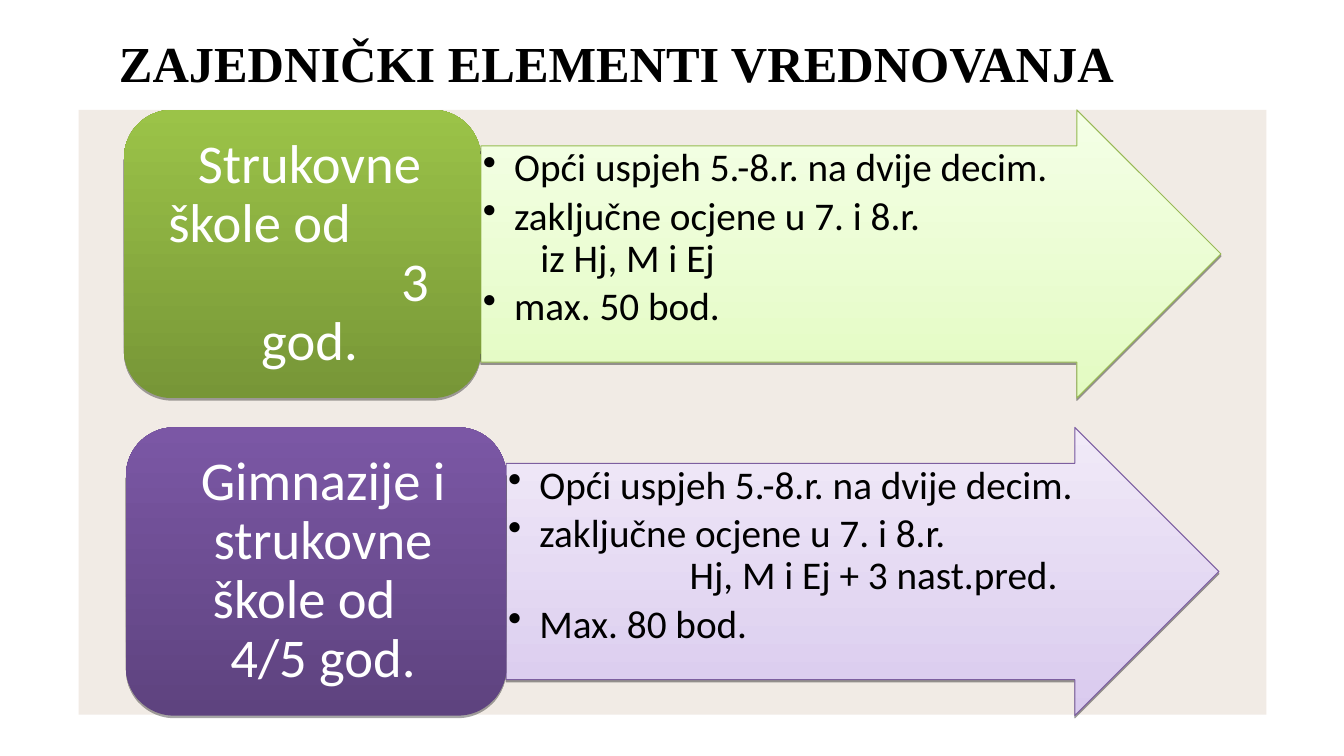
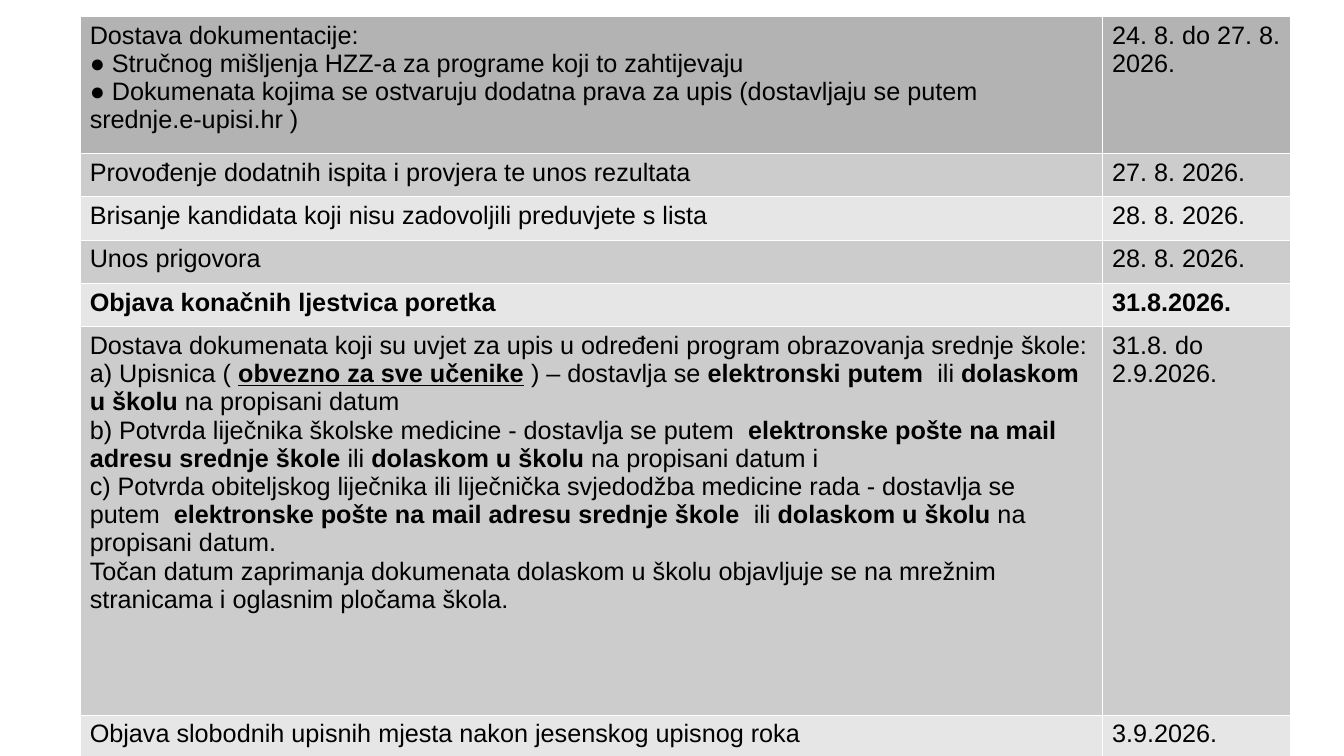
from lxml import etree
from pptx import Presentation
from pptx.dml.color import RGBColor
from pptx.enum.shapes import MSO_SHAPE as Shape
from pptx.enum.text import MSO_ANCHOR as Anchor, PP_ALIGN as Align
from pptx.oxml.ns import qn
from pptx.util import Inches, Pt

COLORS = {
    "text": "000000",
    "white": "FFFFFF",
    "panel": "F1EBE5",
    "green_dark": "779637", "green": "9BC348", "green_line": "98B855",
    "green_pale": "E3FBC2", "green_faint": "F4FFE6",
    "purple_dark": "5E437F", "purple": "7B57A5", "purple_line": "7D5FA0",
    "purple_pale": "D9CAEE", "purple_faint": "F1EAF8",
    "row_head": "B3B3B3", "row_odd": "CCCCCC", "row_even": "E6E6E6",
}
TITLE_ONLY, BLANK = 5, 6
BAND_TOP, BAND_HEIGHT, BAND_STEP = 1.09, 2.86, 3.15

# Label lines are (text, indent); no indent means centred.
# Arrow lines are (text, indent); no indent means a bulleted line.
BANDS = [
    {"hue": "green", "label_left": 1.23, "split": 4.77, "tip": 12.11,
     "label": [("Strukovne", None), ("škole od", 0), ("3", 2.31), ("god.", None)],
     "lines": [("Opći uspjeh 5.-8.r. na dvije decim.", None),
               ("zaključne ocjene u 7. i 8.r.", None),
               ("iz Hj, M i Ej", 0.57),
               ("max. 50 bod.", None)]},
    {"hue": "purple", "label_left": 1.25, "split": 5.02, "tip": 12.09,
     "label": [("Gimnazije i", None), ("strukovne", None),
               ("škole od", 0.42), ("4/5 god.", None)],
     "lines": [("Opći uspjeh 5.-8.r. na dvije decim.", None),
               ("zaključne ocjene u 7. i 8.r.", None),
               ("Hj, M i Ej + 3 nast.pred.", 1.8),
               ("Max. 80 bod.", None)]},
]

BOLD = {"bold": True}
KEY = {"bold": True, "underline": True}
COLUMN_WIDTHS = [10.14, 1.87]
# Each row: height, paragraphs of (text, format) runs, date, date format.
SCHEDULE = [
    (1.36, [[("Dostava dokumentacije:", {})],
            [("● Stručnog mišljenja HZZ-a za programe koji to zahtijevaju", {})],
            [("● Dokumenata kojima se ostvaruju dodatna prava za upis "
              "(dostavljaju se putem srednje.e-upisi.hr )", {})]],
     "24. 8. do 27. 8. 2026.", {}),
    (0.43, [[("Provođenje dodatnih ispita i provjera te unos rezultata", {})]],
     "27. 8. 2026.", {}),
    (0.43, [[("Brisanje kandidata koji nisu zadovoljili preduvjete s lista", {})]],
     "28. 8. 2026.", {}),
    (0.43, [[("Unos prigovora", {})]], "28. 8. 2026.", {}),
    (0.43, [[("Objava konačnih ljestvica poretka", BOLD)]], "31.8.2026.", BOLD),
    (3.85, [[("Dostava dokumenata koji su uvjet za upis u određeni program "
              "obrazovanja srednje škole:", {})],
            [("a) Upisnica ( ", {}), ("obvezno za sve učenike", KEY),
             (" ) – dostavlja se ", {}), ("elektronski putem ", BOLD),
             (" ili ", {}), ("dolaskom u školu", BOLD),
             (" na propisani datum", {})],
            [("b) Potvrda liječnika školske medicine - dostavlja se putem  ", {}),
             ("elektronske pošte na mail adresu srednje škole ", BOLD),
             ("ili ", {}), ("dolaskom u školu", BOLD),
             (" na propisani datum i", {})],
            [("c) Potvrda obiteljskog liječnika ili liječnička svjedodžba "
              "medicine rada - dostavlja se putem  ", {}),
             ("elektronske pošte na mail adresu srednje škole ", BOLD),
             (" ili ", {}), ("dolaskom u školu", BOLD),
             (" na propisani datum.", {})],
            [("Točan datum zaprimanja dokumenata dolaskom u školu objavljuje se "
              "na mrežnim stranicama i oglasnim pločama škola.", {})]],
     "31.8. do 2.9.2026.", {}),
    (0.43, [[("Objava slobodnih upisnih mjesta nakon jesenskog upisnog roka", {})]],
     "3.9.2026.", {}),
]


def rgb(name):
    return RGBColor.from_string(COLORS[name])


def write(paragraph, text, size=18, font="Arial", color="text", bold=False,
          underline=False):
    run = paragraph.add_run()
    run.text = text
    run.font.size = Pt(size)
    run.font.name = font
    run.font.color.rgb = rgb(color)
    run.font.bold = bold
    run.font.underline = underline


def paragraphs_for(frame, items):
    """Yield a paragraph of the frame with each item, reusing the first one."""
    for index, item in enumerate(items):
        yield (frame.add_paragraph() if index else frame.paragraphs[0]), item


def set_indent(paragraph, left, first=0.0):
    properties = paragraph._p.get_or_add_pPr()
    properties.set("marL", str(Inches(left)))
    properties.set("indent", str(Inches(first)))
    return properties


def add_bullet(paragraph):
    properties = set_indent(paragraph, 0.31, -0.31)
    color = etree.SubElement(properties, qn("a:buClr"))
    etree.SubElement(color, qn("a:srgbClr"), val=COLORS["text"])
    etree.SubElement(properties, qn("a:buChar"), char="•")


def set_insets(frame, left, top, right, bottom):
    frame.margin_left, frame.margin_top = Inches(left), Inches(top)
    frame.margin_right, frame.margin_bottom = Inches(right), Inches(bottom)


def add_shadow(shape, distance, opacity):
    shape.shadow.inherit = False
    effects = shape._element.spPr.find(qn("a:effectLst"))
    shadow = etree.SubElement(effects, qn("a:outerShdw"), blurRad="0",
                              dist=str(Pt(distance)), dir="5400000", rotWithShape="0")
    color = etree.SubElement(shadow, qn("a:srgbClr"), val=COLORS["text"])
    etree.SubElement(color, qn("a:alpha"), val=str(opacity * 1000))


def add_block(slide, kind, left, top, width, height, line=None):
    shape = slide.shapes.add_shape(kind, Inches(left), Inches(top),
                                   Inches(width), Inches(height))
    shape.shadow.inherit = False
    if line:
        shape.line.color.rgb = rgb(line)
        shape.line.width = Pt(0.75)
    else:
        shape.line.fill.background()
    shape.text_frame.word_wrap = True
    return shape


def fill_gradient(shape, bottom, top):
    shape.fill.gradient()
    shape.fill.gradient_angle = 90
    for stop, name in zip(shape.fill.gradient_stops, (bottom, top)):
        stop.color.rgb = rgb(name)


def add_title(slide, text):
    title = slide.shapes.title
    title.left, title.top = Inches(1.08), Inches(0.43)
    title.width, title.height = Inches(11.16), Inches(0.54)
    frame = title.text_frame
    frame.vertical_anchor = Anchor.BOTTOM
    set_insets(frame, 0.1, 0.05, 0.1, 0.05)
    frame.paragraphs[0].alignment = Align.LEFT
    write(frame.paragraphs[0], text, size=36, font="Times New Roman", bold=True)


def add_arrow(slide, band, top):
    hue = band["hue"]
    arrow = add_block(slide, Shape.RIGHT_ARROW, band["split"], top,
                      band["tip"] - band["split"], BAND_HEIGHT, line=f"{hue}_line")
    arrow.adjustments[0], arrow.adjustments[1] = 0.75, 0.5
    fill_gradient(arrow, f"{hue}_pale", f"{hue}_faint")
    add_shadow(arrow, 1.6, 38)
    frame = arrow.text_frame
    frame.vertical_anchor = Anchor.TOP
    set_insets(frame, 0.02, 0.02, 0.02, 0.02)
    following = band["lines"][1:] + [("", None)]
    for paragraph, (line, after) in paragraphs_for(frame, zip(band["lines"], following)):
        text, indent = line
        if indent is None:
            add_bullet(paragraph)
        else:
            set_indent(paragraph, indent)
        paragraph.alignment = Align.LEFT
        paragraph.line_spacing = 0.9
        paragraph.space_after = Pt(4.2 if after[1] is None else 0)
        write(paragraph, text, size=28, font="Calibri")


def add_label(slide, band, top):
    hue = band["hue"]
    label = add_block(slide, Shape.ROUNDED_RECTANGLE, band["label_left"], top,
                      band["split"] - band["label_left"], BAND_HEIGHT)
    label.adjustments[0] = 0.167
    fill_gradient(label, f"{hue}_dark", hue)
    add_shadow(label, 1.8, 35)
    frame = label.text_frame
    frame.vertical_anchor = Anchor.MIDDLE
    set_insets(frame, 0.3, 0.22, 0.16, 0.22)
    for paragraph, (text, indent) in paragraphs_for(frame, band["label"]):
        paragraph.alignment = Align.CENTER if indent is None else Align.LEFT
        set_indent(paragraph, indent or 0)
        paragraph.line_spacing = 0.9
        write(paragraph, text, size=39, font="Calibri", color="white")


def format_cell(cell, fill):
    properties = cell._tc.get_or_add_tcPr()
    for side in ("lnL", "lnR", "lnT", "lnB"):
        border = etree.SubElement(properties, qn(f"a:{side}"), w=str(Pt(0.06)))
        solid = etree.SubElement(border, qn("a:solidFill"))
        etree.SubElement(solid, qn("a:srgbClr"), val=COLORS["white"])
    cell.fill.solid()
    cell.fill.fore_color.rgb = rgb(fill)
    set_insets(cell, 0.1, 0.05, 0.1, 0.05)


def add_schedule(slide):
    height = sum(row[0] for row in SCHEDULE)
    table = slide.shapes.add_table(
        len(SCHEDULE), len(COLUMN_WIDTHS), Inches(0.79), Inches(0.16),
        Inches(sum(COLUMN_WIDTHS)), Inches(height)).table
    table.first_row = table.horz_banding = False
    for column, width in zip(table.columns, COLUMN_WIDTHS):
        column.width = Inches(width)
    for index, (row_height, content, date, date_format) in enumerate(SCHEDULE):
        table.rows[index].height = Inches(row_height)
        fill = "row_head" if index == 0 else ("row_odd" if index % 2 else "row_even")
        for column, rows in enumerate((content, [[(date, date_format)]])):
            cell = table.cell(index, column)
            format_cell(cell, fill)
            for paragraph, runs in paragraphs_for(cell.text_frame, rows):
                for text, run_format in runs:
                    write(paragraph, text, **run_format)


def add_elements_slide(presentation):
    slide = presentation.slides.add_slide(presentation.slide_layouts[TITLE_ONLY])
    add_title(slide, "ZAJEDNIČKI ELEMENTI VREDNOVANJA")
    panel = add_block(slide, Shape.RECTANGLE, 0.78, BAND_TOP, 11.78, 6)
    panel.fill.solid()
    panel.fill.fore_color.rgb = rgb("panel")
    for index, band in enumerate(BANDS):
        top = BAND_TOP + index * BAND_STEP
        add_arrow(slide, band, top)
        add_label(slide, band, top)


def main():
    presentation = Presentation()
    presentation.slide_width, presentation.slide_height = Inches(13.33), Inches(7.5)
    add_elements_slide(presentation)
    add_schedule(presentation.slides.add_slide(presentation.slide_layouts[BLANK]))
    presentation.save("out.pptx")


if __name__ == "__main__":
    main()
